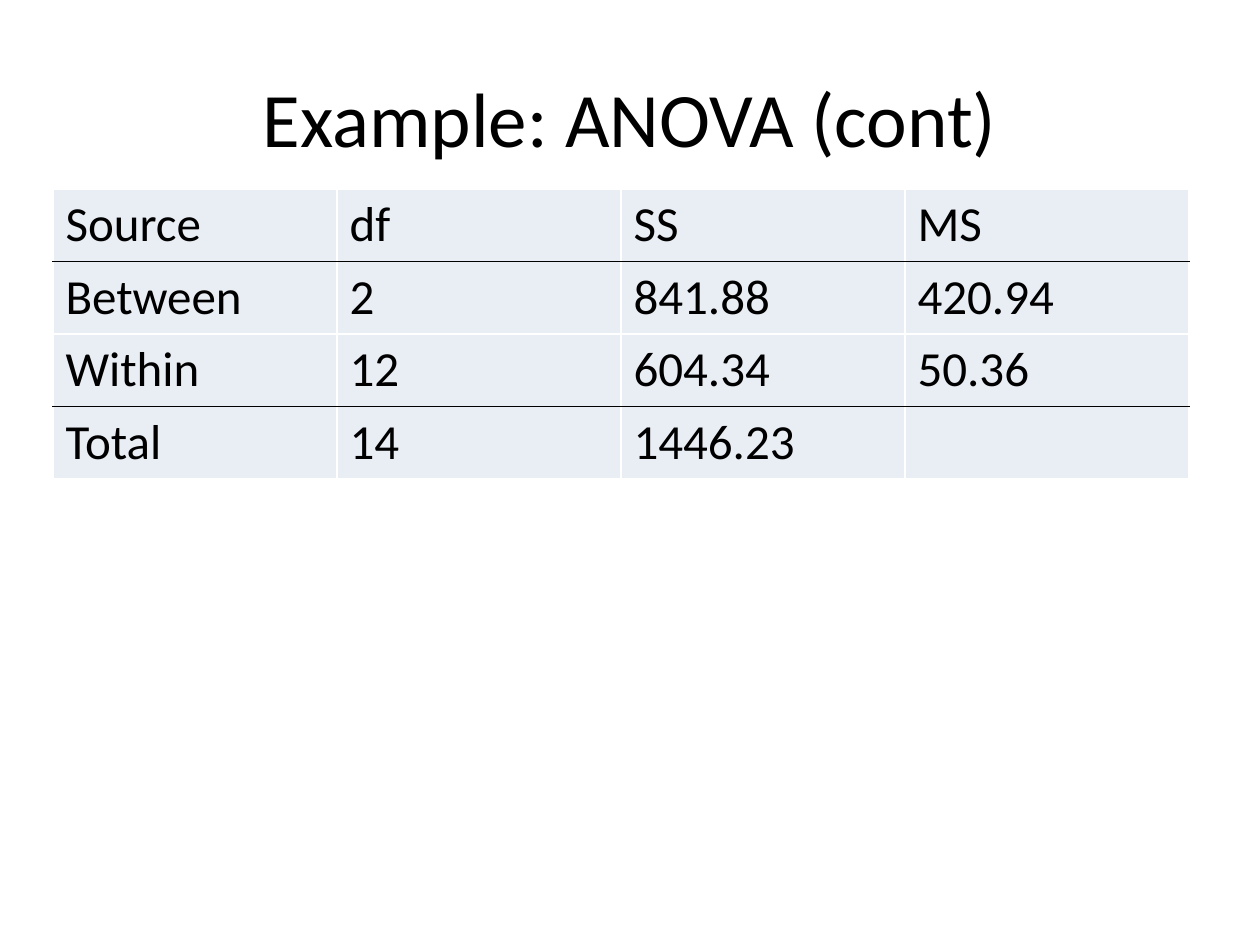
from lxml import etree
from pptx import Presentation
from pptx.dml.color import RGBColor
from pptx.enum.text import MSO_ANCHOR, PP_ALIGN
from pptx.oxml.ns import qn
from pptx.util import Emu, Pt

CENTER = PP_ALIGN.CENTER
MIDDLE = MSO_ANCHOR.MIDDLE
EMU_PER_PX = 914400 / 126
FONT = "Calibri"
BLACK, WHITE, PALE_BLUE = "000000", "FFFFFF", "E9EDF4"
TITLE_ONLY = 5
COLUMN_WIDTH, ROW_HEIGHT = 284, 72
RULED_ROWS = (0, 2)
ANOVA_ROWS = [
    ("Source", "df", "SS", "MS"),
    ("Between", "2", "841.88", "420.94"),
    ("Within", "12", "604.34", "50.36"),
    ("Total", "14", "1446.23", ""),
]


def px(length):
    """Turn whole pixels into EMU."""
    return Emu(round(length * EMU_PER_PX))


def color(value):
    """Turn a hex string into a colour."""
    return RGBColor.from_string(value)


def format_text(frame, size):
    """Apply the slide font and colour to every run."""
    for para in frame.paragraphs:
        for span in para.runs:
            span.font.name = FONT
            span.font.size = Pt(size)
            span.font.color.rgb = color(BLACK)


def add_title(page, text):
    """Fill and place the title placeholder."""
    title = page.shapes.title
    title.left, title.top, title.width, title.height = map(px, (63, 38, 1134, 157))
    frame = title.text_frame
    frame.text = text
    frame.vertical_anchor = MIDDLE
    frame.paragraphs[0].alignment = CENTER
    format_text(frame, 44)


def add_border(cell, side, value):
    """Draw a one-point line on one side of a cell."""
    properties = cell._tc.get_or_add_tcPr()
    line = etree.SubElement(properties, qn(f"a:ln{side}"), w=str(Pt(1)))
    fill = etree.SubElement(line, qn("a:solidFill"))
    etree.SubElement(fill, qn("a:srgbClr"), val=value)


def format_cell(cell, text, top, bottom):
    """Write one cell with its borders and fill."""
    for side, value in (("L", WHITE), ("R", WHITE), ("T", top), ("B", bottom)):
        add_border(cell, side, value)
    cell.fill.solid()
    cell.fill.fore_color.rgb = color(PALE_BLUE)
    cell.text = text
    format_text(cell.text_frame, 28)


def add_anova_table(page, rows):
    """Add the ANOVA table with rules below the header and above the total."""
    row_count, column_count = len(rows), len(rows[0])
    table = page.shapes.add_table(
        row_count, column_count, px(53), px(189),
        px(COLUMN_WIDTH * column_count), px(ROW_HEIGHT * row_count),
    ).table
    table.first_row = False
    table.horz_banding = False
    for row, values in enumerate(rows):
        top = BLACK if row - 1 in RULED_ROWS else WHITE
        bottom = BLACK if row in RULED_ROWS else WHITE
        for column, text in enumerate(values):
            format_cell(table.cell(row, column), text, top, bottom)


def main():
    """Build and save the slide."""
    deck = Presentation()
    deck.slide_width, deck.slide_height = px(1260), px(945)
    page = deck.slides.add_slide(deck.slide_layouts[TITLE_ONLY])
    add_title(page, "Example: ANOVA (cont)")
    add_anova_table(page, ANOVA_ROWS)
    deck.save("out.pptx")


if __name__ == "__main__":
    main()
